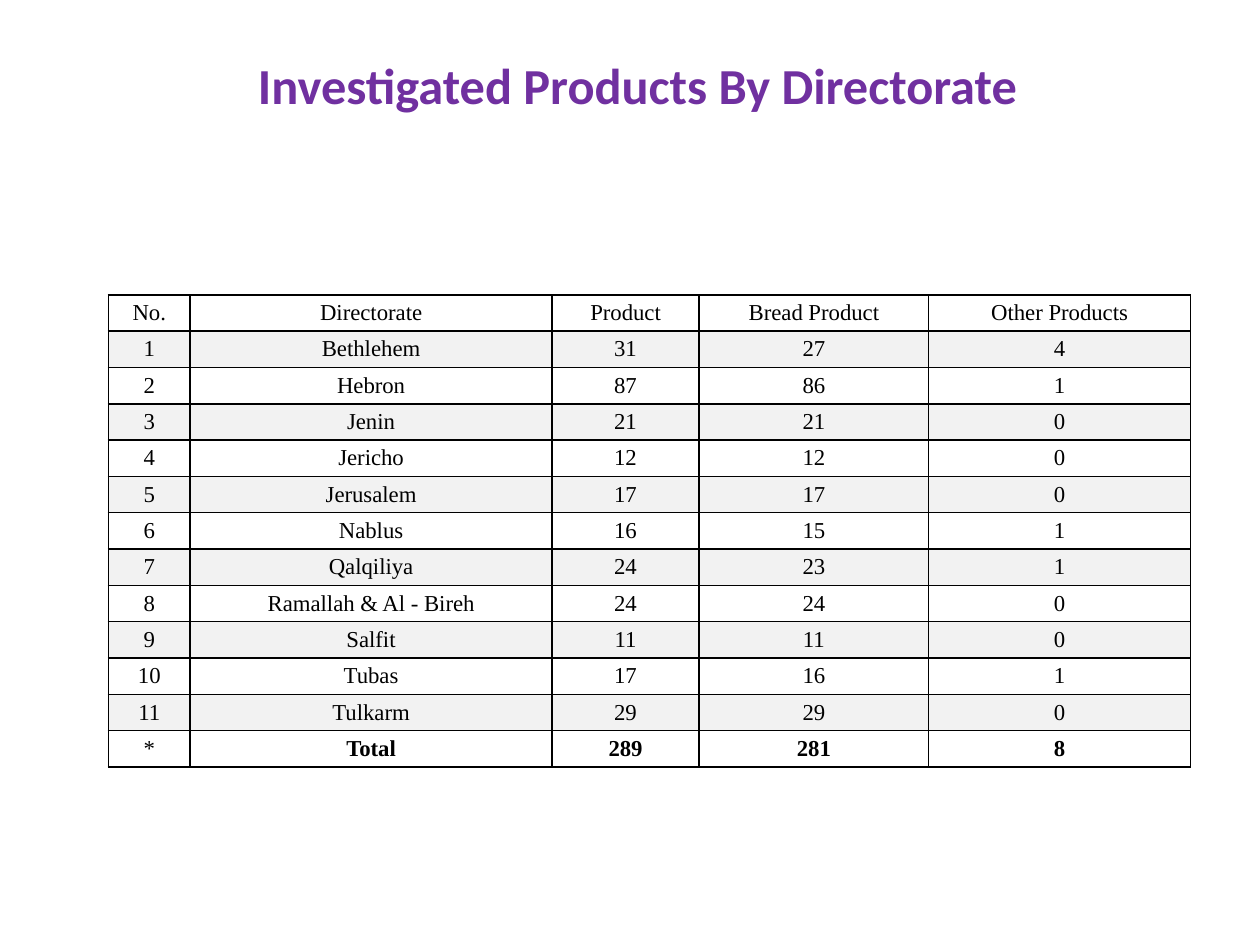
from lxml.etree import SubElement
from pptx import Presentation
from pptx.dml.color import RGBColor
from pptx.enum.text import MSO_ANCHOR, PP_ALIGN
from pptx.oxml.ns import qn
from pptx.util import Inches, Pt

PURPLE = RGBColor(0x70, 0x30, 0xA0)
BLACK = RGBColor(0, 0, 0)
GREY = RGBColor(0xF2, 0xF2, 0xF2)

WIDTHS = [13, 57.4, 23.4, 36.4, 41.6]
HEADS = ["No.", "Directorate", "Product", "Bread Product", "Other Products"]
COUNTS = [
    ("Bethlehem", 31, 27, 4),
    ("Hebron", 87, 86, 1),
    ("Jenin", 21, 21, 0),
    ("Jericho", 12, 12, 0),
    ("Jerusalem", 17, 17, 0),
    ("Nablus", 16, 15, 1),
    ("Qalqiliya", 24, 23, 1),
    ("Ramallah & Al - Bireh", 24, 24, 0),
    ("Salfit", 11, 11, 0),
    ("Tubas", 17, 16, 1),
    ("Tulkarm", 29, 29, 0),
]
TOTAL = ["*", "Total", 289, 281, 8]


def apply(item, values):
    for name, value in values.items():
        setattr(item, name, value)


class Deck:
    """Style and current slide, measured on a grid of 200 columns by 150 rows."""

    unit = Inches(0.05)
    title_font = {"name": "Calibri", "size": Pt(28.8), "bold": True}
    cell_font = {"name": "Times New Roman", "size": Pt(13)}
    title_frame = {"word_wrap": True, "vertical_anchor": MSO_ANCHOR.TOP,
                   "margin_left": Inches(0.22), "margin_top": Inches(0.13)}
    cell_frame = {"vertical_anchor": MSO_ANCHOR.MIDDLE,
                  "margin_left": Inches(0.07), "margin_right": Inches(0.07),
                  "margin_top": 0, "margin_bottom": 0}

    def __init__(self):
        self.show = Presentation()
        apply(self.show, {"slide_width": self.span(200),
                          "slide_height": self.span(150)})
        self.slide = self.show.slides.add_slide(self.show.slide_layouts[6])

    def span(self, count):
        return round(count * self.unit)

    def label(self, frame, text, style, color):
        line = frame.paragraphs[0]
        line.alignment = PP_ALIGN.CENTER
        run = line.add_run()
        run.text = str(text)
        apply(run.font, style)
        run.font.color.rgb = color

    def title(self, text, *area):
        box = self.slide.shapes.add_textbox(*map(self.span, area))
        apply(box.text_frame, self.title_frame)
        self.label(box.text_frame, text, self.title_font, PURPLE)

    def border(self, cell):
        props = cell._tc.get_or_add_tcPr()
        for side in "LRTB":
            line = SubElement(props, qn(f"a:ln{side}"), w=str(Pt(1)))
            fill = SubElement(line, qn("a:solidFill"))
            SubElement(fill, qn("a:srgbClr"), val=str(BLACK))

    def cell(self, cell, text, shade, bold):
        apply(cell, self.cell_frame)
        self.border(cell)
        if shade:
            cell.fill.solid()
            cell.fill.fore_color.rgb = GREY
        else:
            cell.fill.background()
        self.label(cell.text_frame, text, {**self.cell_font, "bold": bold}, BLACK)

    def table(self, rows, widths, left, top, height):
        area = map(self.span, (left, top, sum(widths), height))
        table = self.slide.shapes.add_table(len(rows), len(widths), *area).table
        apply(table, {"first_row": False, "horz_banding": False})
        for column, width in zip(table.columns, widths):
            column.width = self.span(width)
        for r, row in enumerate(rows):
            for c, text in enumerate(row):
                bold = r == len(rows) - 1 and c > 0
                self.cell(table.cell(r, c), text, r % 2 == 1, bold)


def main():
    deck = Deck()
    deck.title("Investigated Products By Directorate", 10, 6, 180, 25)
    body = [(number, *row) for number, row in enumerate(COUNTS, 1)]
    deck.table([HEADS, *body, TOTAL], WIDTHS, 17.2, 46.8, 75)
    deck.show.save("out.pptx")


if __name__ == "__main__":
    main()
